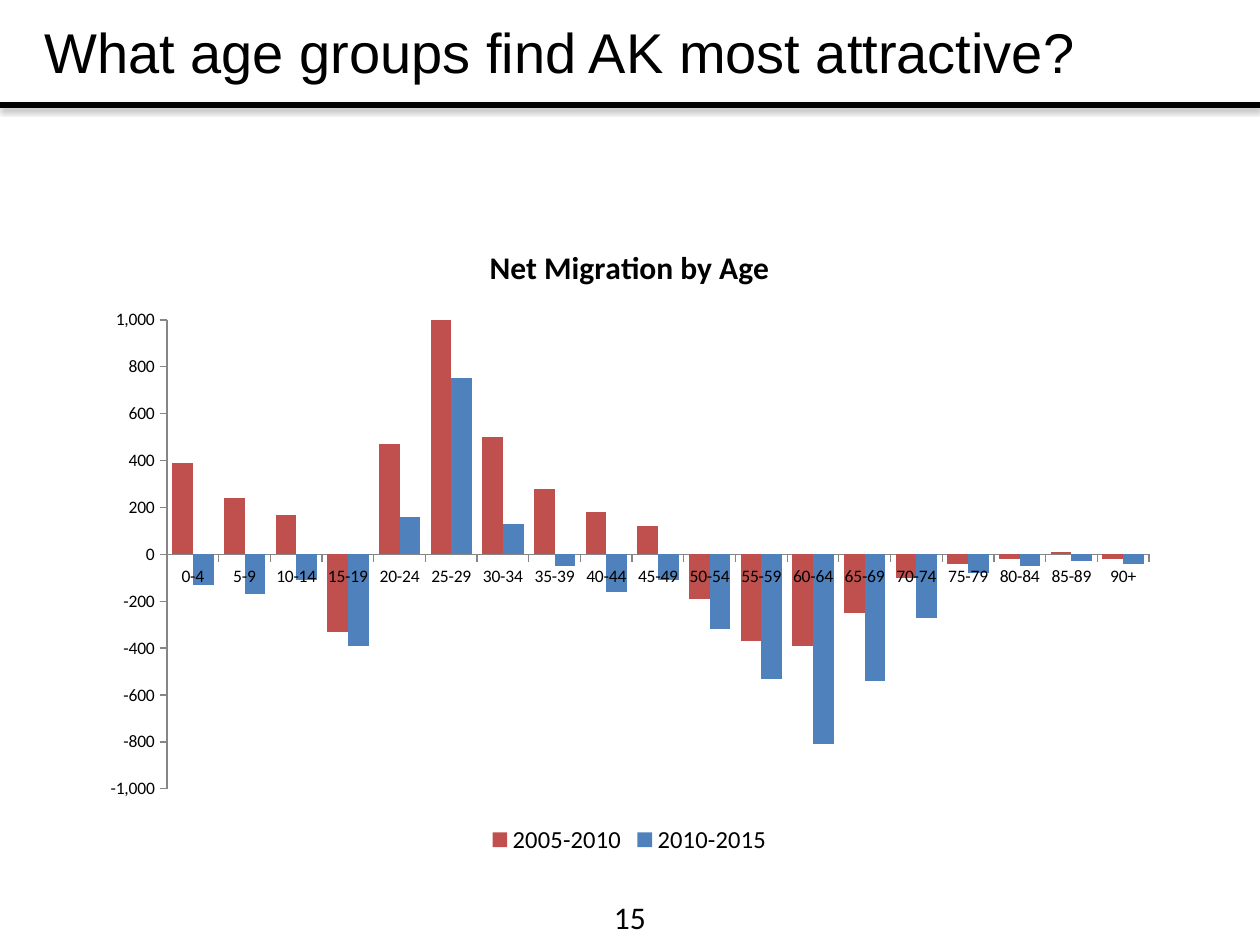
from lxml.etree import SubElement
from pptx import Presentation
from pptx.chart.data import CategoryChartData
from pptx.dml.color import RGBColor
from pptx.enum.chart import XL_CHART_TYPE, XL_LEGEND_POSITION, XL_TICK_LABEL_POSITION, XL_TICK_MARK
from pptx.enum.shapes import MSO_CONNECTOR
from pptx.enum.text import PP_ALIGN
from pptx.oxml import parse_xml
from pptx.oxml.ns import nsdecls, qn
from pptx.util import Pt

PX = 914400 / 126
BLACK = RGBColor(0x00, 0x00, 0x00)
GRAY = RGBColor(0x86, 0x86, 0x86)
RED = RGBColor(0xC0, 0x50, 0x4D)
BLUE = RGBColor(0x4F, 0x81, 0xBD)

AGES = [f"{start}-{start + 4}" for start in range(0, 90, 5)] + ["90+"]
MIGRATION = {
    "2005-2010": (RED, [390, 240, 170, -330, 470, 1000, 500, 280, 180, 120,
                        -190, -370, -390, -250, -100, -40, -20, 10, -20]),
    "2010-2015": (BLUE, [-130, -170, -110, -390, 160, 750, 130, -50, -160, -110,
                         -320, -530, -810, -540, -270, -80, -50, -30, -40]),
}


def emu(*lengths):
    """Turn pixel lengths into EMU."""
    return [round(length * PX) for length in lengths]


def style_font(font, size, name="Calibri", bold=False):
    """Set a black font of the given size."""
    font.name, font.size, font.bold = name, Pt(size), bold
    font.color.rgb = BLACK


def add_text(page, box, text, size, name, align, margin_top):
    """Place one line of text in a box."""
    frame = page.shapes.add_textbox(*emu(*box)).text_frame
    frame.word_wrap = True
    frame.margin_top = emu(margin_top)[0]
    frame.text = text
    para = frame.paragraphs[0]
    para.alignment = align
    style_font(para.runs[0].font, size, name)


def add_rule(page, box):
    """Draw the heading rule with its soft shadow along the top of a box."""
    left, top, width, _ = box
    rule = page.shapes.add_connector(
        MSO_CONNECTOR.STRAIGHT, *emu(left, top, left + width, top))
    rule.line.color.rgb = BLACK
    rule.line.width = Pt(3)
    rule._element.spPr.append(parse_xml(
        f'<a:effectLst {nsdecls("a")}>'
        '<a:outerShdw blurRad="40000" dist="23000" dir="5400000" rotWithShape="0">'
        '<a:srgbClr val="000000"><a:alpha val="35000"/></a:srgbClr>'
        '</a:outerShdw></a:effectLst>'))


def fix_plot_area(chart, box, plot):
    """Pin the inner plot area, given relative to the chart box."""
    plot_area = chart._chartSpace.chart.plotArea
    for old in plot_area.findall(qn("c:layout")):
        plot_area.remove(old)
    layout = parse_xml(f'<c:layout {nsdecls("c")}/>')
    plot_area.insert(0, layout)
    manual = SubElement(layout, qn("c:manualLayout"))
    settings = {"layoutTarget": "inner", "xMode": "edge", "yMode": "edge"}
    for key, length, whole in zip("xywh", plot, box[2:] * 2):
        settings[key] = f"{length / whole:.4f}"
    for key, value in settings.items():
        SubElement(manual, qn(f"c:{key}")).set("val", value)


def style_axis(axis):
    """Give an axis a thin gray line, outside ticks and small labels."""
    axis.has_major_gridlines = False
    axis.major_tick_mark = XL_TICK_MARK.OUTSIDE
    axis.minor_tick_mark = XL_TICK_MARK.NONE
    axis.tick_label_position = XL_TICK_LABEL_POSITION.NEXT_TO_AXIS
    axis.format.line.color.rgb = GRAY
    axis.format.line.width = Pt(0.75)
    style_font(axis.tick_labels.font, 10)


def add_migration_chart(page, box):
    """Chart net migration by age group for both periods."""
    data = CategoryChartData(number_format="#,##0")
    data.categories = AGES
    for name, (_, values) in MIGRATION.items():
        data.add_series(name, values)
    chart = page.shapes.add_chart(
        XL_CHART_TYPE.COLUMN_CLUSTERED, *emu(*box), data).chart
    style_font(chart.font, 10)

    chart.has_title = True
    title = chart.chart_title.text_frame
    title.text = "Net Migration by Age"
    style_font(title.paragraphs[0].runs[0].font, 18, bold=True)

    chart.has_legend = True
    chart.legend.position = XL_LEGEND_POSITION.BOTTOM
    chart.legend.include_in_layout = False
    style_font(chart.legend.font, 14)

    style_axis(chart.category_axis)
    style_axis(chart.value_axis)
    chart.value_axis.minimum_scale = -1000
    chart.value_axis.maximum_scale = 1000
    chart.value_axis.major_unit = 200
    chart.value_axis.tick_labels.number_format = "#,##0"
    chart.value_axis.tick_labels.number_format_is_linked = False

    plot = chart.plots[0]
    plot.gap_width, plot.overlap = 50, 0
    plot.vary_by_categories = False
    for series, (color, _) in zip(plot.series, MIGRATION.values()):
        series.invert_if_negative = False
        series.format.fill.solid()
        series.format.fill.fore_color.rgb = color
    fix_plot_area(chart, box, (78, 100, 982, 469))


def main():
    """Build the slide and save the deck."""
    deck = Presentation()
    deck.slide_width, deck.slide_height = emu(1260, 945)
    page = deck.slides.add_slide(deck.slide_layouts[6])
    add_text(page, (32, 6, 1155, 90), "What age groups find AK most attractive?",
             32, "Arial", PP_ALIGN.LEFT, 12)
    add_rule(page, (0, 105, 1260, 0))
    add_migration_chart(page, (89, 220, 1081, 640))
    add_text(page, (0, 892, 1260, 50), "15", 18, "Calibri", PP_ALIGN.CENTER, 6)
    deck.save("out.pptx")


if __name__ == "__main__":
    main()
